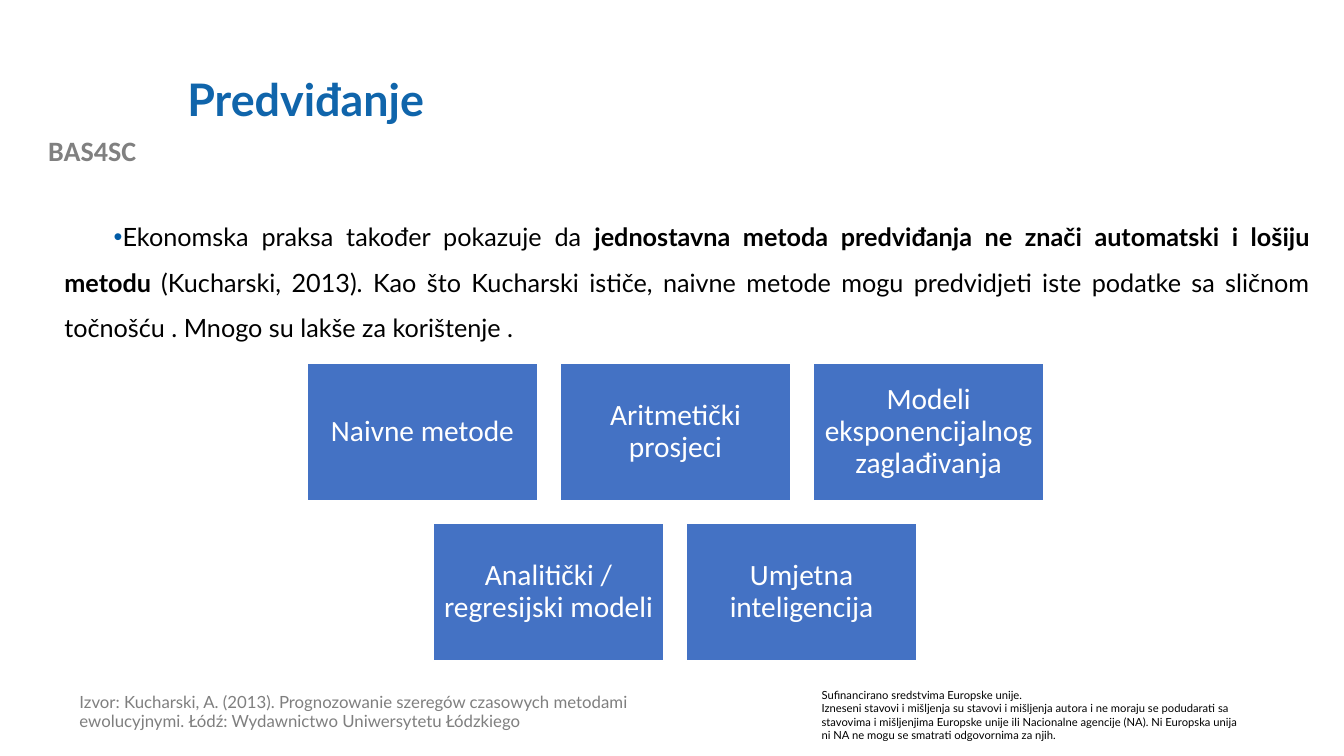
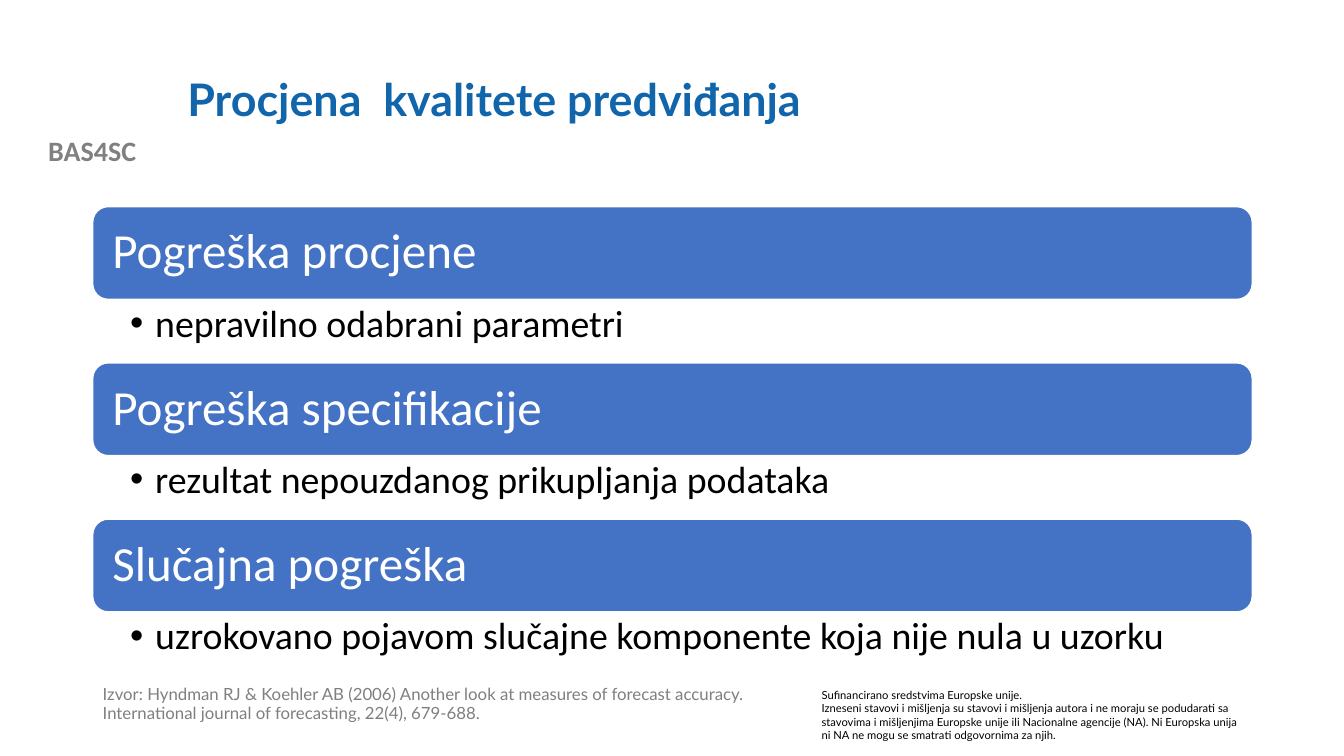
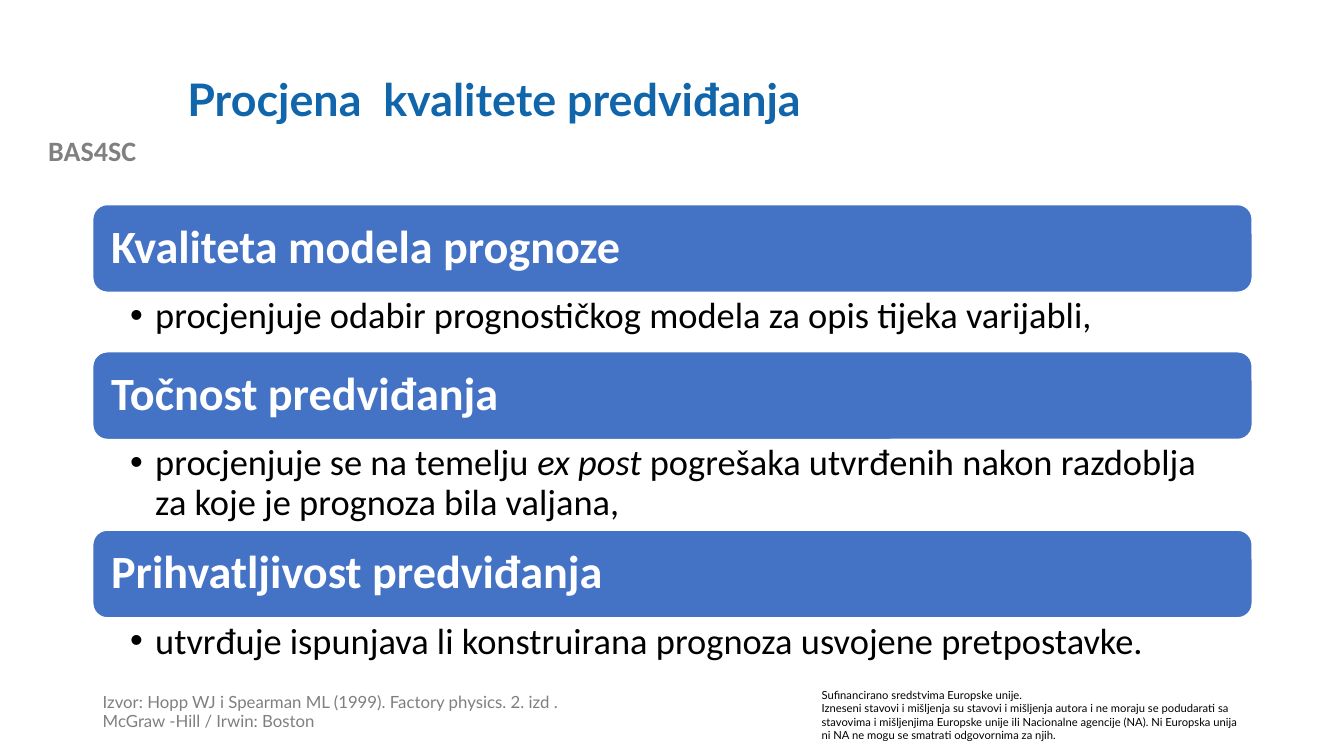
"""Build three slides on forecasting methods and forecast quality."""
from lxml.etree import SubElement
from pptx import Presentation
from pptx.dml.color import RGBColor
from pptx.enum.shapes import MSO_SHAPE as Shape
from pptx.enum.text import MSO_ANCHOR as Anchor, PP_ALIGN as Align
from pptx.oxml.ns import qn
from pptx.util import Pt

PX = 9144
TITLE_BLUE = "1065AB"
BULLET_BLUE = "015BA6"
FILL_BLUE = "4472C4"
LABEL_GREY = "808080"
SOURCE_GREY = "7F7F7F"
BLACK = "000000"
WHITE = "FFFFFF"
DISCLAIMER = (
    "Sufinancirano sredstvima Europske unije.\n"
    "Izneseni stavovi i mišljenja su stavovi i mišljenja autora i ne moraju se podudarati sa "
    "stavovima i mišljenjima Europske unije ili Nacionalne agencije (NA). Ni Europska unija "
    "ni NA ne mogu se smatrati odgovornima za njih."
)


def add_box(page, area, text, size, color, font="Lato", bold=False, spacing=0.9,
            align=Align.LEFT, anchor=Anchor.TOP, insets=(10, 5, 10, 5), preset=None,
            bullet=None, indent=(0, 0)):
    """Add a text box or filled preset shape; "|" in the text separates runs."""
    area = [value * PX for value in area]
    if preset is None:
        box = page.shapes.add_textbox(*area)
    else:
        box = page.shapes.add_shape(preset, *area)
        box.shadow.inherit = False
        box.fill.solid()
        box.fill.fore_color.rgb = RGBColor.from_string(FILL_BLUE)
        box.line.color.rgb = RGBColor.from_string(WHITE)
        box.line.width = Pt(1)
    frame = box.text_frame
    frame.word_wrap = True
    frame.vertical_anchor = anchor
    frame.margin_left, frame.margin_top, frame.margin_right, frame.margin_bottom = [
        inset * PX for inset in insets]
    frame.text = text
    for para in frame.paragraphs:
        first, *others = para.text.split("|")
        para.text = first
        for other in others:
            para.add_run().text = other
        para.alignment = align
        para.line_spacing = spacing
        if bullet:
            properties = para._p.get_or_add_pPr()
            properties.set("marL", str(indent[0] * PX))
            properties.set("indent", str(indent[1] * PX))
            tint = SubElement(properties, qn("a:buClr"))
            SubElement(tint, qn("a:srgbClr"), val=bullet)
            SubElement(properties, qn("a:buFont"), typeface="Arial")
            SubElement(properties, qn("a:buChar"), char="•")
        for span in para.runs:
            span.font.name = font
            span.font.size = Pt(size)
            span.font.bold = bold
            span.font.color.rgb = RGBColor.from_string(color)
    return frame.paragraphs[0]


deck = Presentation()
deck.slide_width = 1333 * PX
deck.slide_height = 750 * PX

outline = [
    ("Predviđanje", (69, 684, 663, 66),
     "Izvor: Kucharski, A. (2013). Prognozowanie szeregów czasowych metodami ewolucyjnymi. "
     "Łódź: Wydawnictwo Uniwersytetu Łódzkiego"),
    ("Procjena  kvalitete predviđanja", (92, 676, 681, 92),
     "Izvor: Hyndman RJ & Koehler AB (2006) Another look at measures of forecast accuracy. "
     "International journal of forecasting, 22(4), 679-688."),
    ("Procjena  kvalitete predviđanja", (92, 684, 501, 52),
     "Izvor: Hopp WJ i Spearman ML (1999). Factory physics. 2. izd . "
     "McGraw -Hill / Irwin: Boston"),
]
pages = []
for title, source_area, source in outline:
    page = deck.slides.add_slide(deck.slide_layouts[6])
    add_box(page, (0, 128, 183, 44), "BAS4SC", 20, LABEL_GREY, "Calibri", True, 1.0, Align.CENTER)
    add_box(page, (805, 678, 437, 64), DISCLAIMER, 8, BLACK, spacing=1.0)
    add_box(page, (176, 40, 1066, 122), title, 32, TITLE_BLUE, bold=True, anchor=Anchor.MIDDLE)
    add_box(page, source_area, source, 12, SOURCE_GREY)
    pages.append(page)

methods_page, errors_page, quality_page = pages

practice = add_box(
    methods_page, (29, 200, 1280, 175),
    "Ekonomska praksa također pokazuje da |jednostavna metoda predviđanja ne znači automatski "
    "i lošiju metodu |(Kucharski, 2013). Kao što Kucharski ističe, naivne metode mogu "
    "predvidjeti iste podatke sa sličnom točnošću . Mnogo su lakše za korištenje .",
    18, BLACK, spacing=1.5, align=Align.JUSTIFY, bullet=BULLET_BLUE, indent=(25, 49))
practice.runs[1].font.bold = True

method_rows = [
    (305, ["Naivne metode", "Aritmetički prosjeci", "Modeli eksponencijalnog zaglađivanja"]),
    (430, ["Analitički / regresijski modeli", "Umjetna inteligencija"]),
]
for row, (left, methods) in enumerate(method_rows):
    for column, method in enumerate(methods):
        add_box(methods_page, (left + column * 251, 360 + row * 159, 228, 137), method, 21, WHITE,
                "Calibri", align=Align.CENTER, anchor=Anchor.MIDDLE, insets=(9, 9, 9, 9),
                preset=Shape.RECTANGLE)

bar_lists = [
    (errors_page, 205, 92, 35, 27, 15, False, [
        ("Pogreška procjene", 63, "nepravilno odabrani parametri"),
        ("Pogreška specifikacije", 63, "rezultat nepouzdanog prikupljanja podataka"),
        ("Slučajna pogreška", 63, "uzrokovano pojavom slučajne komponente koja nije nula u uzorku"),
    ]),
    (quality_page, 203, 87, 33, 26, 14, True, [
        ("Kvaliteta modela prognoze", 59,
         "procjenjuje odabir prognostičkog modela za opis tijeka varijabli,"),
        ("Točnost predviđanja", 90,
         "procjenjuje se na temelju |ex post |pogrešaka utvrđenih nakon razdoblja za koje je "
         "prognoza bila valjana,"),
        ("Prihvatljivost predviđanja", 59,
         "utvrđuje ispunjava li konstruirana prognoza usvojene pretpostavke."),
    ]),
]
for page, top, bar_height, bar_size, detail_size, inset, bold, entries in bar_lists:
    for heading, detail_height, detail in entries:
        add_box(page, (92, top, 1150, bar_height), heading, bar_size, WHITE, "Calibri", bold,
                anchor=Anchor.MIDDLE, insets=(inset,) * 4, preset=Shape.ROUNDED_RECTANGLE)
        top += bar_height
        para = add_box(page, (92, top, 1150, detail_height), detail, detail_size, BLACK, "Calibri",
                       insets=(37, 5, 26, 5), bullet=BLACK, indent=(25, -25))
        for span in para.runs[1:2]:
            span.font.italic = True
        top += detail_height

deck.save("out.pptx")
